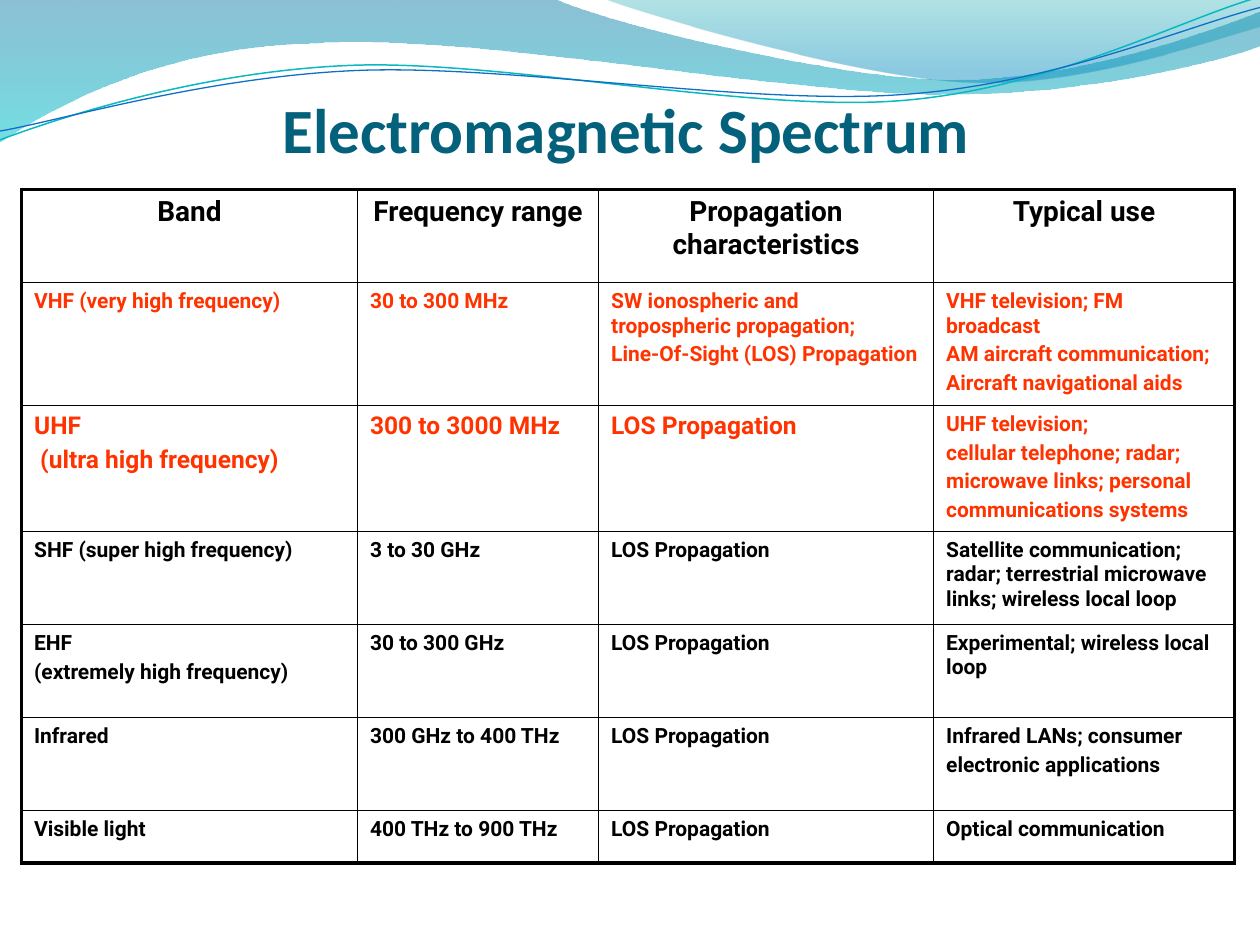
from math import cos, radians, sin

from lxml.etree import SubElement
from pptx import Presentation
from pptx.dml.color import RGBColor
from pptx.enum.text import MSO_ANCHOR, MSO_AUTO_SIZE, PP_ALIGN
from pptx.oxml.ns import qn
from pptx.util import Pt

COLORS = {
    "text": "000000", "accent": "FF3300", "title": "04617B",
    "blue": "0074A1", "cyan": "00C6CF", "teal": "00A1A9", "sky": "008BBF",
    "teal_line": "0AB8BF", "blue_line": "0F6FC6",
}

# Waves: a start point, then steps of one point (line) or three points (curve).
BROAD_WAVE = [
    (0, 0), [(316.8, -0.7)],
    [(342.7, 12.2), (478, 45.4), (545.8, 45.4)],
    [(614.2, 45.4), (689.8, 18.7), (720, 6.5)],
    [(720.7, 25.9)],
    [(707.8, 31.7), (626.4, 54.7), (537.1, 54)],
    [(447.8, 54), (275, 20.2), (185, 24.5)],
    [(92.9, 25.9), (33.1, 59.8), (-0.7, 81.4)],
    [(0, 0)],
]
RIGHT_WAVE = [
    (344.9, -0.7),
    [(366.5, 7.9), (491, 44.6), (553.7, 46.8)],
    [(616.3, 49.7), (691.9, 23), (720, 15.1)],
    [(720, 0)], [(344.9, -0.7)],
]
TEAL_CURVE = [
    (0, 79.9),
    [(34.6, 67), (113.8, 41), (199.4, 37.4)],
    [(284.4, 33.8), (427, 64.1), (513.4, 57.6)],
    [(599.8, 51.1), (675.4, 10.8), (718.6, -1.4)],
]
BLUE_CURVE = [
    (0, 74.9),
    [(33.8, 69.1), (118.1, 43.9), (203.8, 40.3)],
    [(290.2, 36.7), (429.8, 60.5), (516.2, 54)],
    [(601.9, 48.2), (677.5, 15.1), (720, 4.3)],
]
TILT = -2.7
CURVE_CENTER = (359.5, 42)

COLUMN_WIDTHS = [192, 137.8, 191.4, 172]
ROW_HEIGHTS = [53.2, 70.2, 72, 53.2, 53.2, 53.2, 30]
LOS = "LOS Propagation"
BANDS = [
    ["Band", "Frequency range", "Propagation characteristics", "Typical use"],
    ["VHF (very high frequency)", "30 to 300 MHz",
     "SW ionospheric and tropospheric propagation;\nLine-Of-Sight (LOS) Propagation",
     "VHF television; FM broadcast\nAM aircraft communication;\nAircraft navigational aids"],
    ["UHF\n (ultra high frequency)", "300 to 3000 MHz", LOS,
     "UHF television;\ncellular telephone; radar;\nmicrowave links; personal\ncommunications systems"],
    ["SHF (super high frequency)", "3 to 30 GHz", LOS,
     "Satellite communication; radar; terrestrial microwave links; wireless local loop"],
    ["EHF\n(extremely high frequency)", "30 to 300 GHz", LOS,
     "Experimental; wireless local loop"],
    ["Infrared", "300 GHz to 400 THz", LOS,
     "Infrared LANs; consumer\nelectronic applications"],
    ["Visible light", "400 THz to 900 THz", LOS, "Optical communication"],
]


def rgb(name):
    return RGBColor.from_string(COLORS[name])


def write(tf, text, font="Roboto", size=12, color="text", bold=True,
          align=PP_ALIGN.LEFT, gap=0.0):
    """Write one paragraph per line; gap is the space between them in text sizes."""
    for i, line in enumerate(text.split("\n")):
        p = tf.paragraphs[0] if i == 0 else tf.add_paragraph()
        p.alignment = align
        p.space_before = Pt(size * gap if i else 0)
        r = p.add_run()
        r.text = line
        r.font.name, r.font.size, r.font.bold = font, Pt(size), bold
        r.font.color.rgb = rgb(color)


def turn(point, angle):
    """Rotate a point clockwise about the centre of the thin curves."""
    cx, cy = CURVE_CENTER
    x, y, a = point[0] - cx, point[1] - cy, radians(angle)
    return cx + x * cos(a) - y * sin(a), cy + x * sin(a) + y * cos(a)


class Deck:
    def __init__(self, width, height):
        self.prs = Presentation()
        self.prs.slide_width, self.prs.slide_height = Pt(width), Pt(height)
        self.s = self.prs.slides.add_slide(self.prs.slide_layouts[5])

    def outline(self, steps, close):
        """Build a freeform, merging each step of three points into a Bezier curve."""
        points = [steps[0]] + [point for step in steps[1:] for point in step]
        start, *rest = [(Pt(x), Pt(y)) for x, y in points]
        builder = self.s.shapes.build_freeform(*start)
        builder.add_line_segments(rest, close=close)
        sp = builder.convert_to_shape()
        sp.shadow.inherit = False
        lines = sp._element.iter(qn("a:lnTo"))
        segments = iter(list(lines))
        for step in steps[1:]:
            parts = [next(segments) for _ in step]
            if len(parts) == 3:
                parts[0].tag
                curve = SubElement(parts[0].getparent(), qn("a:cubicBezTo"))
                parts[0].addprevious(curve)
                for part in parts:
                    curve.append(part[0])
                    part.getparent().remove(part)
        return sp

    def wave(self, steps, stops):
        """Fill an outline downwards; stops are (position, colour, opacity %)."""
        sp = self.outline(steps, close=True)
        sp.line.fill.background()
        sp.fill.gradient()
        sp.fill.gradient_angle = 270
        for stop, (position, color, _) in zip(sp.fill.gradient_stops, stops):
            stop.position = position
            stop.color.rgb = rgb(color)
        for clr, (_, _, opacity) in zip(sp._element.spPr.iter(qn("a:srgbClr")), stops):
            SubElement(clr, qn("a:alpha"), val=str(opacity * 1000))

    def curve(self, steps, color, width):
        level = [turn(steps[0], -TILT)]
        level += [[turn(point, -TILT) for point in step] for step in steps[1:]]
        sp = self.outline(level, close=False)
        sp.rotation = TILT
        sp.fill.background()
        sp.line.color.rgb = rgb(color)
        sp.line.width = Pt(width)

    def title(self, text, left, top, width, height):
        sp = self.s.shapes.title
        sp.left, sp.top, sp.width, sp.height = map(Pt, (left, top, width, height))
        tf = sp.text_frame
        tf.word_wrap = True
        tf.auto_size = MSO_AUTO_SIZE.SHAPE_TO_FIT_TEXT
        tf.vertical_anchor = MSO_ANCHOR.TOP
        write(tf, text, font="Calibri", size=36, color="title", align=PP_ALIGN.CENTER)
        self.s.shapes._spTree.append(sp._element)  # bring to front

    def borders(self, cell, widths):
        tc_pr = cell._tc.get_or_add_tcPr()
        for side, width in zip("LRTB", widths):
            ln = SubElement(tc_pr, qn("a:ln" + side), w=str(Pt(width)))
            fill = SubElement(ln, qn("a:solidFill"))
            SubElement(fill, qn("a:srgbClr"), val=COLORS["text"])

    def table(self, rows, left, top, widths, heights, style, thin=1, thick=2.25):
        """Draw a table with a thick frame; style(row, column) gives text format."""
        last_row, last_col = len(rows) - 1, len(widths) - 1
        table = self.s.shapes.add_table(
            len(rows), len(widths), Pt(left), Pt(top),
            Pt(sum(widths)), Pt(sum(heights))).table
        table.first_row = table.horz_banding = False
        for column, width in zip(table.columns, widths):
            column.width = Pt(width)
        for i, (row, height) in enumerate(zip(rows, heights)):
            table.rows[i].height = Pt(height)
            for j, text in enumerate(row):
                cell = table.cell(i, j)
                edges = (j == 0, j == last_col, i == 0, i == last_row)
                self.borders(cell, [thick if edge else thin for edge in edges])
                cell.fill.background()
                write(cell.text_frame, text, gap=0.2, **style(i, j))


def band_style(row, column):
    if row == 0:
        return {"size": 16, "align": PP_ALIGN.CENTER}
    return {"size": 14 if row == 2 and column < 3 else 12,
            "color": "accent" if row in (1, 2) else "text"}


def main():
    deck = Deck(720, 540)
    deck.wave(BROAD_WAVE, [(0, "blue", 45), (1, "cyan", 55)])
    deck.wave(RIGHT_WAVE, [(0, "teal", 30), (0.8, "sky", 45)])
    deck.curve(TEAL_CURVE, "teal_line", 0.85)
    deck.curve(BLUE_CURVE, "blue_line", 0.75)
    deck.table(BANDS, 12.3, 108.3, COLUMN_WIDTHS, ROW_HEIGHTS, band_style)
    deck.title("Electromagnetic Spectrum", 0, 48, 715.5, 51)
    deck.prs.save("out.pptx")


if __name__ == "__main__":
    main()
